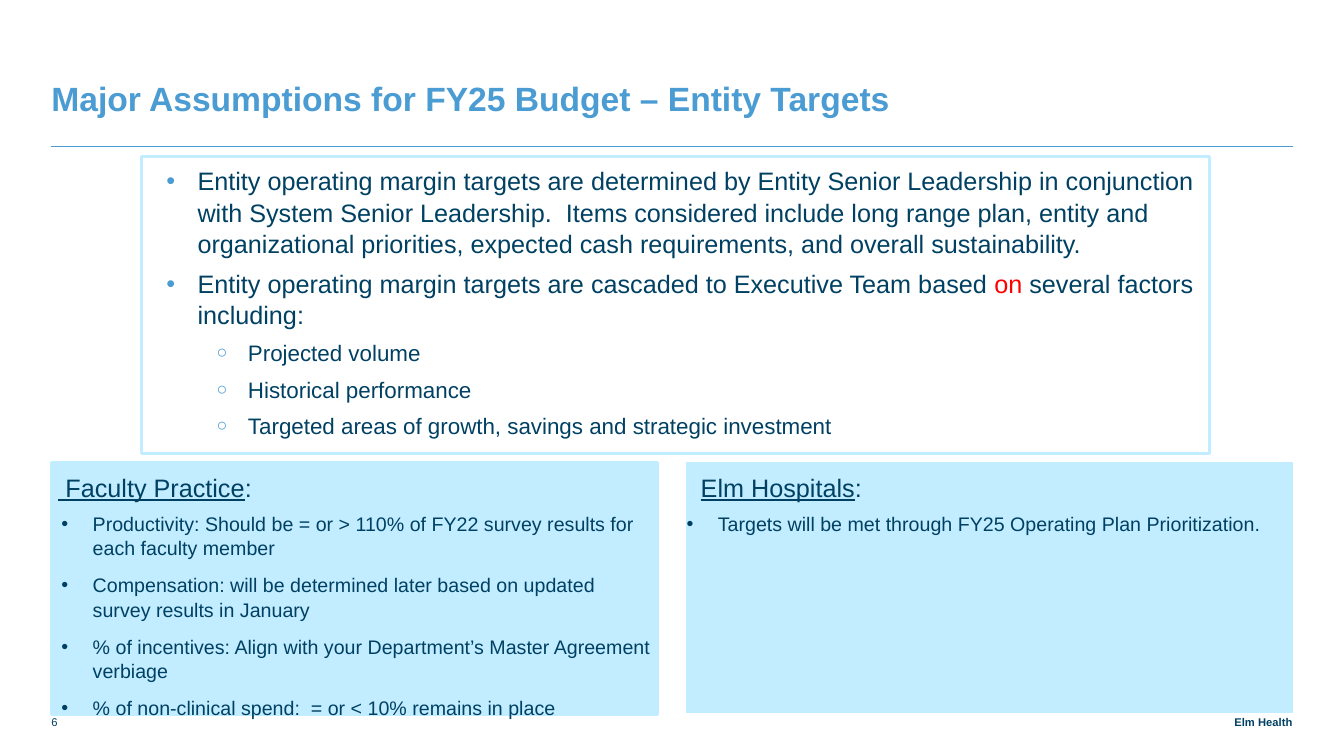
from lxml.etree import SubElement
from dataclasses import dataclass
from pptx import Presentation
from pptx.dml.color import RGBColor
from pptx.enum.shapes import MSO_CONNECTOR, MSO_SHAPE
from pptx.enum.text import MSO_ANCHOR, PP_ALIGN
from pptx.oxml.ns import qn
from pptx.util import Inches, Pt


@dataclass(frozen=True)
class Theme:
    font: str = "Arial"
    navy: str = "004163"
    blue: str = "4B9CD3"
    pale: str = "C2ECFF"
    red: str = "FF0000"
    title: int = 24
    lead: int = 18
    sub: int = 16
    detail: int = 14
    small: int = 8


THEME = Theme()

TITLE = "Major Assumptions for FY25 Budget – Entity Targets"
PAGE_NUMBER = "6"
FOOTER = "Elm Health"
TARGETS = [
    ("lead", ["Entity operating margin targets are determined by Entity Senior Leadership in conjunction "
              "with System Senior Leadership.  Items considered include long range plan, entity and "
              "organizational priorities, expected cash requirements, and overall sustainability."]),
    ("lead", ["Entity operating margin targets are cascaded to Executive Team based",
              (" on ", {"color": THEME.red}), "several factors including:"]),
    ("sub", ["Projected volume"]),
    ("sub", ["Historical performance"]),
    ("sub", ["Targeted areas of growth, savings and strategic investment"]),
]
FACULTY = [
    ("faculty_heading", [(" Faculty Practice", {"underline": True}), ":"]),
    ("faculty", ["Productivity: Should be = or > 110% of FY22 survey results for each faculty member"]),
    ("faculty", ["Compensation: will be determined later based on updated survey results in January"]),
    ("faculty", ["% of incentives: Align with your Department’s Master Agreement verbiage"]),
    ("faculty", ["% of non-clinical spend:  = or < 10% remains in place"]),
]
HOSPITALS = [
    ("hospitals_heading", [("Elm Hospitals", {"underline": True}), ":"]),
    ("hospitals", ["Targets will be met through FY25 Operating Plan Prioritization."]),
]

STYLES = {
    "title": {"size": THEME.title, "color": THEME.blue, "bold": True, "spacing": Pt(28)},
    "page": {"size": THEME.small},
    "footer": {"size": THEME.small, "bold": True, "align": PP_ALIGN.RIGHT},
    "lead": {"size": THEME.lead, "left": 0.56, "bullet": "•", "bullet_color": THEME.blue, "after": 6},
    "sub": {"size": THEME.sub, "left": 1.06, "bullet": "○", "bullet_color": THEME.blue,
            "bullet_scale": 80, "after": 6},
    "faculty_heading": {"size": THEME.lead, "left": 0.07, "after": 6},
    "faculty": {"size": THEME.detail, "left": 0.41, "bullet": "•", "after": 9},
    "hospitals_heading": {"size": THEME.lead, "left": 0.14, "after": 6},
    "hospitals": {"size": THEME.detail, "left": 0.31, "bullet": "•", "after": 6},
}

LEFT, RIGHT = 0.51, 12.82
HANG = 0.31
BODY_SPACING = 1.04
PANEL_TOP, PANEL_WIDTH = 4.59, 6.01


def set_indent(paragraph, style):
    properties = paragraph._p.get_or_add_pPr()
    bullet = style.get("bullet")
    properties.set("marL", str(Inches(style.get("left", 0))))
    properties.set("indent", str(Inches(-HANG if bullet else 0)))
    if not bullet:
        SubElement(properties, qn("a:buNone"))
        return
    color = SubElement(properties, qn("a:buClr"))
    SubElement(color, qn("a:srgbClr"), val=style.get("bullet_color", THEME.navy))
    SubElement(properties, qn("a:buSzPct"), val=str(style.get("bullet_scale", 100) * 1000))
    SubElement(properties, qn("a:buFont"), typeface=THEME.font)
    SubElement(properties, qn("a:buChar"), char=bullet)


def write(shape, paragraphs, anchor=MSO_ANCHOR.TOP, top=0, right=0):
    frame = shape.text_frame
    layout = {"word_wrap": True, "vertical_anchor": anchor, "margin_left": 0,
              "margin_top": Inches(top), "margin_right": Inches(right), "margin_bottom": 0}
    for name, value in layout.items():
        setattr(frame, name, value)
    for index, (kind, runs) in enumerate(paragraphs):
        style = STYLES[kind]
        paragraph = frame.add_paragraph() if index else frame.paragraphs[0]
        set_indent(paragraph, style)
        spacing = {"alignment": style.get("align", PP_ALIGN.LEFT),
                   "space_before": Pt(0), "space_after": Pt(style.get("after", 0)),
                   "line_spacing": style.get("spacing", BODY_SPACING)}
        for name, value in spacing.items():
            setattr(paragraph, name, value)
        for item in runs:
            words, change = (item, {}) if isinstance(item, str) else item
            run = paragraph.add_run()
            run.text = words
            look = {"name": THEME.font, "size": Pt(style["size"]),
                    "bold": style.get("bold", False), "underline": change.get("underline", False)}
            for name, value in look.items():
                setattr(run.font, name, value)
            color = change.get("color", style.get("color", THEME.navy))
            run.font.color.rgb = RGBColor.from_string(color)


def add_label(slide, box, kind, words, right=0):
    label = slide.shapes.add_textbox(*map(Inches, box))
    write(label, [(kind, [words])], anchor=MSO_ANCHOR.BOTTOM, right=right)


def add_panel(slide, box, paragraphs, border, filled=True):
    panel = slide.shapes.add_shape(MSO_SHAPE.RECTANGLE, *map(Inches, box))
    panel.shadow.inherit = False
    if filled:
        panel.fill.solid()
        panel.fill.fore_color.rgb = RGBColor.from_string(THEME.pale)
    else:
        panel.fill.background()
    panel.line.color.rgb = RGBColor.from_string(THEME.pale)
    panel.line.width = Pt(border)
    write(panel, paragraphs, top=0.08)


def add_rule(slide, y):
    rule = slide.shapes.add_connector(
        MSO_CONNECTOR.STRAIGHT, Inches(LEFT), Inches(y), Inches(RIGHT), Inches(y))
    rule.line.color.rgb = RGBColor.from_string(THEME.blue)
    rule.line.width = Pt(0.5)
    SubElement(rule._element.spPr, qn("a:effectLst"))


def main():
    deck = Presentation()
    deck.slide_width, deck.slide_height = Inches(13.33), Inches(7.5)
    slide = deck.slides.add_slide(deck.slide_layouts[6])
    add_label(slide, (RIGHT - 1.64, 7, 1.64, 0.23), "footer", FOOTER)
    add_rule(slide, 1.45)
    add_panel(slide, (LEFT, PANEL_TOP, PANEL_WIDTH, 2.5), FACULTY, 2.25)
    add_label(slide, (LEFT, 7, 0.46, 0.23), "page", PAGE_NUMBER)
    add_label(slide, (LEFT, 0.38, RIGHT - LEFT, 0.79), "title", TITLE, right=2.12)
    add_panel(slide, (1.4, 1.55, 10.6, 2.95), TARGETS, 2.25, filled=False)
    add_panel(slide, (RIGHT - PANEL_WIDTH, PANEL_TOP, PANEL_WIDTH, 2.48), HOSPITALS, 0.75)
    deck.save("out.pptx")


if __name__ == "__main__":
    main()
